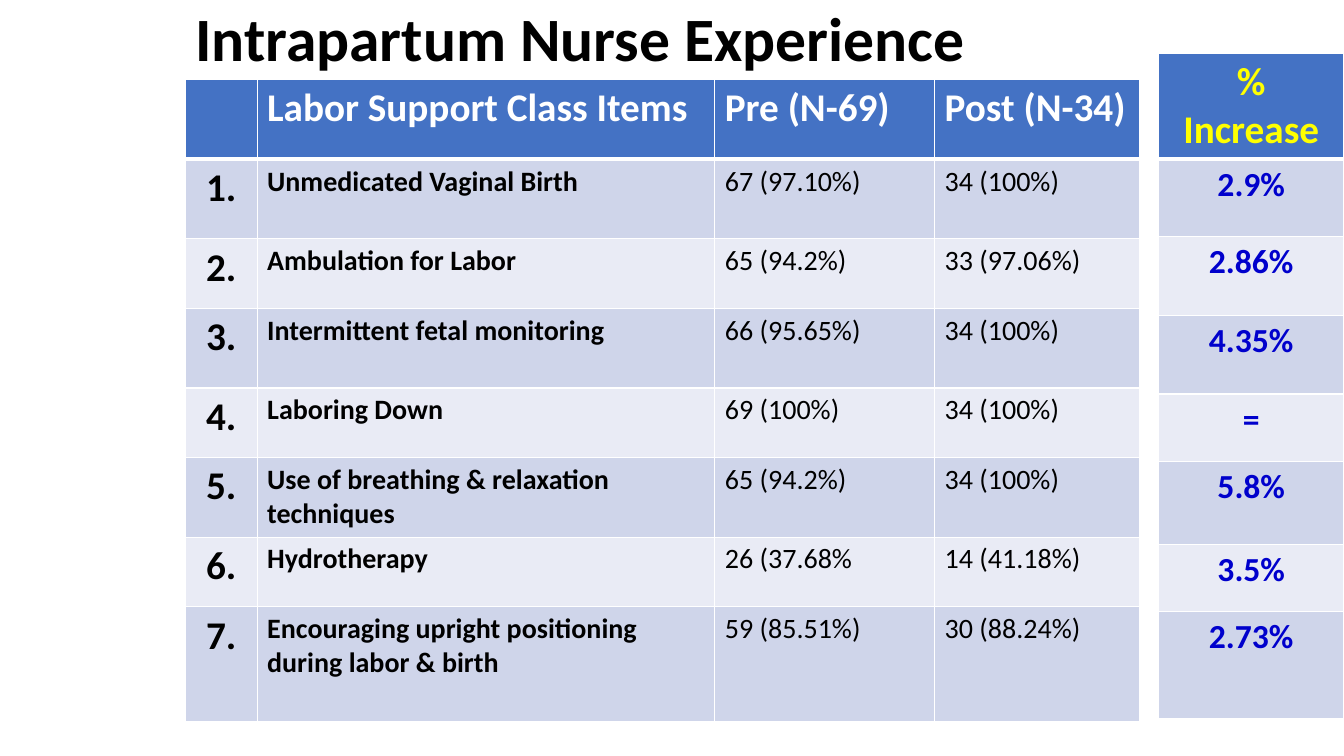
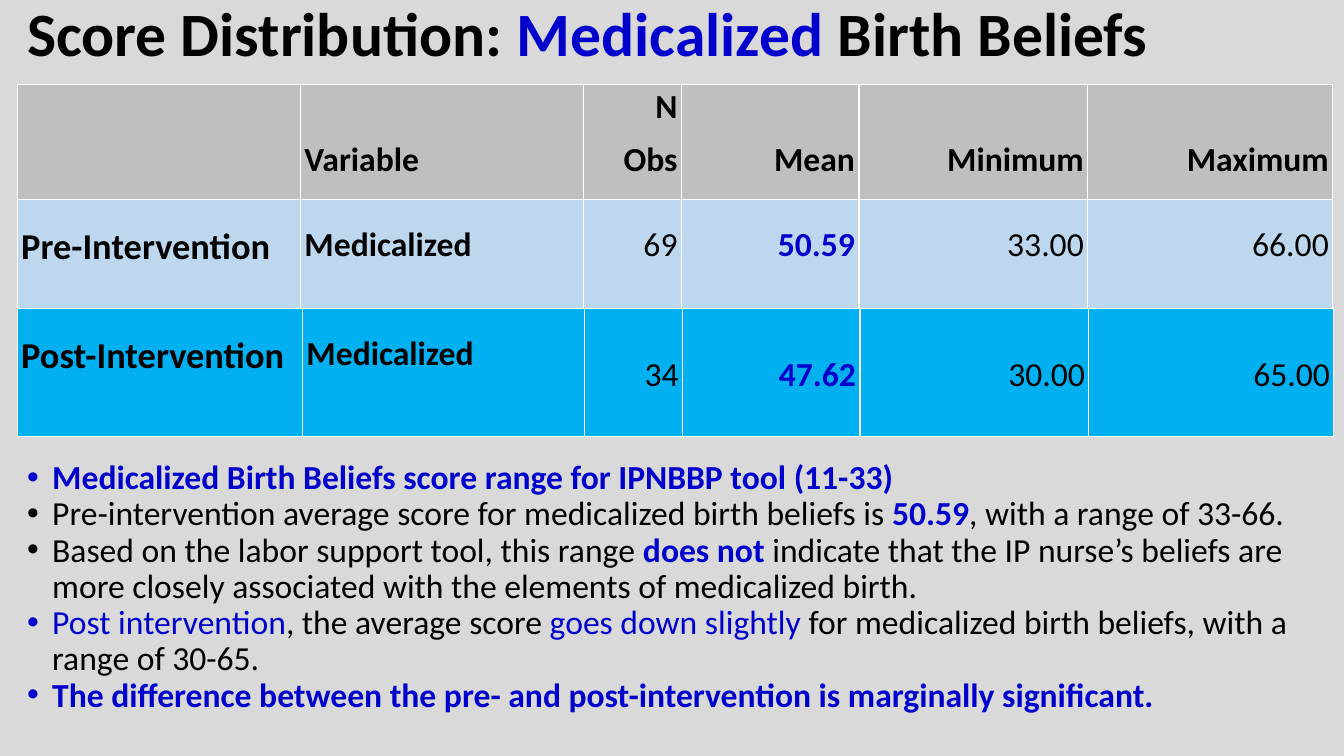
from dataclasses import dataclass

import lxml.etree
import pptx
import pptx.dml.color
import pptx.enum.text
import pptx.oxml.ns
import pptx.util

Inches = pptx.util.Inches
Pt = pptx.util.Pt
ALIGN = pptx.enum.text.PP_ALIGN
ANCHOR = pptx.enum.text.MSO_ANCHOR
qn = pptx.oxml.ns.qn

FONT = "Calibri"
COLORS = {
    "black": "000000",
    "white": "FFFFFF",
    "accent": "0000CC",
    "yellow": "FFFF00",
    "header": "4472C4",
    "band_dark": "CFD5EA",
    "band_light": "E9EBF5",
    "page_gray": "D9D9D9",
    "header_gray": "BFBFBF",
    "pre": "BDD7EE",
    "post": "00B0F0",
}


@dataclass(frozen=True)
class Run:
    text: str
    color: str = "black"
    bold: bool = False


@dataclass(frozen=True)
class Cell:
    text: str
    fill: str
    size: float = 24
    color: str = "black"
    bold: bool = False
    align: ALIGN = ALIGN.LEFT
    anchor: ANCHOR = ANCHOR.TOP
    margin_x: float = 0.1
    margin_top: float = 0.05
    margin_bottom: float = 0.05
    space_after: float = 0
    top_line: float = 1
    bottom_line: float = 1


def rgb(name: str) -> pptx.dml.color.RGBColor:
    return pptx.dml.color.RGBColor.from_string(COLORS[name])


def add_run(p, text: str, *, size: float, color: str = "black", bold: bool = False) -> None:
    r = p.add_run()
    r.text = text
    r.font.name = FONT
    r.font.size = Pt(size)
    r.font.bold = bold
    r.font.color.rgb = rgb(color)


def add_page(prs, background: str):
    s = prs.slides.add_slide(prs.slide_layouts[6])
    s.background.fill.solid()
    s.background.fill.fore_color.rgb = rgb(background)
    return s


def add_text_box(s, left: float, top: float, width: float, height: float):
    sp = s.shapes.add_textbox(Inches(left), Inches(top), Inches(width), Inches(height))
    tf = sp.text_frame
    tf.word_wrap = True
    return tf


def add_title(s, runs: list[Run], left: float, width: float, height: float) -> None:
    tf = add_text_box(s, left, 0, width, height)
    tf.margin_top = tf.margin_bottom = 0
    tf.vertical_anchor = ANCHOR.MIDDLE
    p = tf.paragraphs[0]
    p.line_spacing = 0.9
    for run in runs:
        add_run(p, run.text, size=44, color=run.color, bold=True)


def add_bullets(s, items: list[list[Run]]) -> None:
    tf = add_text_box(s, 0.17, 4.52, 13.06, 2.63)
    for i, runs in enumerate(items):
        p = tf.paragraphs[0] if i == 0 else tf.add_paragraph()
        pPr = p._p.get_or_add_pPr()
        pPr.set("marL", str(Inches(0.25)))
        pPr.set("indent", str(-Inches(0.25)))
        lxml.etree.SubElement(pPr, qn("a:buFont")).set("typeface", "Arial")
        lxml.etree.SubElement(pPr, qn("a:buChar")).set("char", "•")
        p.line_spacing = 0.9
        for run in runs:
            add_run(p, run.text, size=24, color=run.color, bold=run.bold)


def set_borders(tc, top: float, bottom: float) -> None:
    tcPr = tc.get_or_add_tcPr()
    sides = {"lnL": 1, "lnR": 1, "lnT": top, "lnB": bottom}
    for i, (side, weight) in enumerate(sides.items()):
        ln = lxml.etree.Element(qn(f"a:{side}"), w=str(Pt(weight)))
        fill = lxml.etree.SubElement(ln, qn("a:solidFill"))
        lxml.etree.SubElement(fill, qn("a:srgbClr")).set("val", COLORS["white"])
        tcPr.insert(i, ln)


def fill_cell(c, cell: Cell) -> None:
    c.fill.solid()
    c.fill.fore_color.rgb = rgb(cell.fill)
    c.vertical_anchor = cell.anchor
    c.margin_left = c.margin_right = Inches(cell.margin_x)
    c.margin_top = Inches(cell.margin_top)
    c.margin_bottom = Inches(cell.margin_bottom)
    set_borders(c._tc, cell.top_line, cell.bottom_line)
    if not cell.text:
        return
    tf = c.text_frame
    lines = cell.text.split("\n")
    for i, line in enumerate(lines):
        p = tf.paragraphs[0] if i == 0 else tf.add_paragraph()
        p.alignment = cell.align
        if i < len(lines) - 1:
            p.space_after = Pt(cell.space_after)
        add_run(p, line, size=cell.size, color=cell.color, bold=cell.bold)


def add_grid(s, left: float, top: float, cols: list[float], rows: list[float],
             cells: list[list[Cell]]) -> None:
    table = s.shapes.add_table(
        len(rows), len(cols), Inches(left), Inches(top),
        Inches(sum(cols)), Inches(sum(rows)),
    ).table
    table.first_row = table.horz_banding = False
    for column, width in zip(table.columns, cols):
        column.width = Inches(width)
    for row, height, row_cells in zip(table.rows, rows, cells):
        row.height = Inches(height)
        for c, cell in zip(row.cells, row_cells):
            fill_cell(c, cell)


def header_cell(text: str, **fmt) -> Cell:
    style = dict(size=28, color="white", bold=True, bottom_line=3) | fmt
    return Cell(text, "header", **style)


def build_experience(prs) -> None:
    s = add_page(prs, "white")
    add_title(s, [Run("Intrapartum Nurse Experience")], 1.84, 10.57, 0.82)
    items = [
        ("Unmedicated Vaginal Birth", "67 (97.10%)", "34 (100%)", "2.9%"),
        ("Ambulation for Labor", "65 (94.2%)", "33 (97.06%)", "2.86%"),
        ("Intermittent fetal monitoring", "66 (95.65%)", "34 (100%)", "4.35%"),
        ("Laboring Down", "69 (100%)", "34 (100%)", "="),
        ("Use of breathing & relaxation techniques", "65 (94.2%)", "34 (100%)", "5.8%"),
        ("Hydrotherapy", "26 (37.68%", "14 (41.18%)", "3.5%"),
        ("Encouraging upright positioning during labor & birth",
         "59 (85.51%)", "30 (88.24%)", "2.73%"),
    ]
    heads = ["", "Labor Support Class Items", "Pre (N-69)", "Post (N-34)"]
    counts = [[header_cell(head) for head in heads]]
    increases = [[header_cell("% Increase", color="yellow", align=ALIGN.CENTER)]]
    for i, (item, pre, post, increase) in enumerate(items):
        band = dict(fill="band_light" if i % 2 else "band_dark", top_line=1 if i else 3)
        counts.append([
            Cell(f"{i + 1}.", size=28, bold=True, align=ALIGN.CENTER, **band),
            Cell(item, size=20, bold=True, **band),
            Cell(pre, size=20, **band),
            Cell(post, size=20, **band),
        ])
        increases.append(
            [Cell(increase, color="accent", bold=True, align=ALIGN.CENTER, **band)])
    add_grid(s, 1.84, 0.79, [0.71, 4.54, 2.18, 2.03],
             [0.79, 0.79, 0.69, 0.79, 0.69, 0.79, 0.69, 1.14], counts)
    add_grid(s, 11.49, 0.53, [1.84],
             [1.05, 0.77, 0.78, 0.78, 0.67, 0.82, 0.67, 1.06], increases)


def score_row(fill: str, label: str, numbers: list[str], number_top: float) -> list[Cell]:
    base = dict(fill=fill, margin_x=0.04, margin_bottom=0)
    row = [
        Cell(label, size=26, bold=True, margin_top=0.25, **base),
        Cell("Medicalized", bold=True, margin_top=0.25, **base),
    ]
    for i, number in enumerate(numbers):
        is_mean = i == 1
        row.append(Cell(number, color="accent" if is_mean else "black", bold=is_mean,
                        align=ALIGN.RIGHT, margin_top=number_top, **base))
    return row


def build_scores(prs) -> None:
    s = add_page(prs, "page_gray")
    add_title(s, [Run("Score Distribution: "), Run("Medicalized ", "accent"),
                  Run("Birth Beliefs")], 0.17, 12.59, 0.73)
    add_bullets(s, [
        [Run("Medicalized Birth Beliefs score range for IPNBBP tool (11-33)", "accent", True)],
        [Run("Pre-intervention average score for medicalized birth beliefs is "),
         Run("50.59", "accent", True), Run(", with a range of 33-66.")],
        [Run("Based on the labor support tool, this range "),
         Run("does not ", "accent", True),
         Run("indicate that the IP nurse’s beliefs are more closely associated "
             "with the elements of medicalized birth.")],
        [Run("Post intervention", "accent"), Run(", the average score "),
         Run("goes down slightly", "accent"),
         Run(" for medicalized birth beliefs, with a range of 30-65.")],
        [Run("The difference between the pre- and post-intervention is "
             "marginally significant.", "accent", True)],
    ])
    heads = ["", "Variable", "N\nObs", "Mean", "Minimum", "Maximum"]
    header = [
        Cell(head, "header_gray", bold=True, anchor=ANCHOR.BOTTOM, margin_x=0.04,
             margin_top=0, margin_bottom=0.19, space_after=8.6,
             align=ALIGN.RIGHT if i > 1 else ALIGN.LEFT)
        for i, head in enumerate(heads)
    ]
    pre = score_row("pre", "Pre-Intervention", ["69", "50.59", "33.00", "66.00"], 0.25)
    post = score_row("post", "Post-Intervention", ["34", "47.62", "30.00", "65.00"], 0.46)
    number_cols = [0.97, 1.76, 2.27, 2.43]
    add_grid(s, 0.17, 0.84, [2.81, 2.81, *number_cols], [1.14, 1.08], [header, pre])
    add_grid(s, 0.17, 3.06, [2.83, 2.8, *number_cols], [1.27], [post])


def main() -> None:
    prs = pptx.Presentation()
    prs.slide_width = Inches(13.33)
    prs.slide_height = Inches(7.5)
    build_experience(prs)
    build_scores(prs)
    prs.save("out.pptx")


if __name__ == "__main__":
    main()
